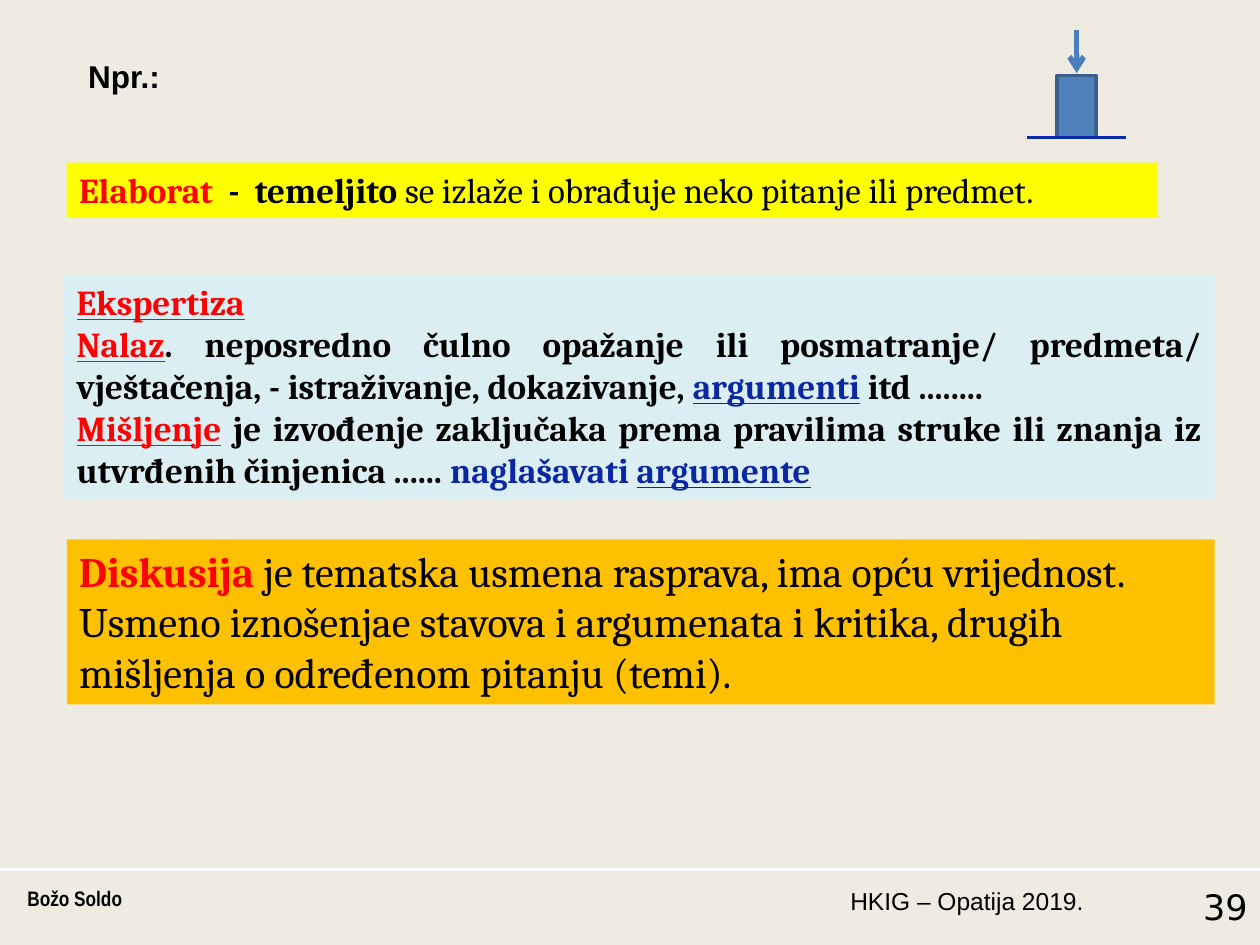
from lxml import etree
from pptx import Presentation
from pptx.dml.color import RGBColor
from pptx.enum.shapes import MSO_CONNECTOR as Conn, MSO_SHAPE as Shape
from pptx.enum.text import MSO_ANCHOR as Anchor, MSO_AUTO_SIZE as AutoSize, PP_ALIGN as Align
from pptx.oxml.ns import qn
from pptx.util import Inches, Pt

COLORS = {
    "background": "EEECE1", "white": "FFFFFF", "black": "000000",
    "red": "FF0000", "blue": "0B28A1", "yellow": "FFFF00",
    "pale": "DBEEF4", "orange": "FFC000", "block": "4F81BD",
    "block_edge": "3A5F8C", "ground": "0C2AAC", "arrow": "4B7EBC",
}

# Run styles: colour, bold, underline
TERM = ("red", True, False)
TERM_LINE = ("red", True, True)
PLAIN = ("black", False, False)
STRONG = ("black", True, False)
KEY = ("blue", True, False)
KEY_LINE = ("blue", True, True)

ELABORAT = [[
    ("Elaborat ", TERM),
    (" -  temeljito", STRONG),
    (" se izlaže i obrađuje neko pitanje ili predmet.", PLAIN),
]]
EKSPERTIZA = [
    [("Ekspertiza", TERM_LINE)],
    [
        ("Nalaz", TERM_LINE),
        (". neposredno čulno opažanje ili posmatranje/ predmeta/ vještačenja, "
         "- istraživanje, dokazivanje, ", STRONG),
        ("argumenti", KEY_LINE),
        (" itd ........", STRONG),
    ],
    [
        ("Mišljenje", TERM_LINE),
        (" je izvođenje zaključaka prema pravilima struke ili znanja iz "
         "utvrđenih činjenica ...... ", STRONG),
        ("naglašavati ", KEY),
        ("argumente", KEY_LINE),
    ],
]
DISKUSIJA = [
    [("Diskusija ", TERM),
     ("je tematska usmena rasprava, ima opću vrijednost.", PLAIN)],
    [("Usmeno iznošenjae stavova i argumenata i kritika, drugih mišljenja "
      "o određenom pitanju (temi).", PLAIN)],
]


def rgb(name):
    return RGBColor.from_string(COLORS[name])


def set_font(font, name, size, bold=False):
    font.name, font.size, font.bold = name, Pt(size), bold
    font.color.rgb = rgb("black")


def add_line(s, start, end, color, width, arrow=False):
    line = s.shapes.add_connector(Conn.STRAIGHT, *map(Inches, start + end))
    line.line.color.rgb = rgb(color)
    line.line.width = Pt(width)
    if arrow:
        etree.SubElement(line.line._get_or_add_ln(), qn("a:tailEnd"), type="arrow")
    etree.SubElement(line._element.spPr, qn("a:effectLst"))


def add_rect(s, box, fill):
    sp = s.shapes.add_shape(Shape.RECTANGLE, *map(Inches, box))
    sp.shadow.inherit = False
    sp.fill.solid()
    sp.fill.fore_color.rgb = rgb(fill)
    sp.line.fill.background()
    return sp


def place_title(s, box, text):
    sp = s.shapes.title
    sp.left, sp.top, sp.width, sp.height = map(Inches, box)
    tf = sp.text_frame
    tf.text = text
    tf.word_wrap = False
    tf.auto_size = AutoSize.NONE
    tf.vertical_anchor = Anchor.TOP
    p = tf.paragraphs[0]
    p.alignment = Align.LEFT
    set_font(p.font, "Arial", 18, True)


def add_definition(s, box, fill, paragraphs, size, align=Align.LEFT):
    """Filled panel; each paragraph is a list of (text, run style)."""
    tf = add_rect(s, box, fill).text_frame
    tf.word_wrap = True
    tf.vertical_anchor = Anchor.TOP
    for i, runs in enumerate(paragraphs):
        p = tf.add_paragraph() if i else tf.paragraphs[0]
        p.alignment = align
        p.font.name, p.font.size = "Cambria", Pt(size)
        for text, (color, bold, underline) in runs:
            r = p.add_run()
            r.text = text
            r.font.bold, r.font.underline = bold, underline
            r.font.color.rgb = rgb(color)


def add_loaded_block(s, box):
    """Block on a ground line with a load arrow pressing on its top."""
    left, top, width, height = box
    middle, ground = left + width / 2, top + height
    block_w, block_h = 0.31, 0.49
    block_top = ground - block_h
    block = add_rect(s, (middle - block_w / 2, block_top, block_w, block_h), "block")
    block.line.color.rgb = rgb("block_edge")
    block.line.width = Pt(2)
    add_line(s, (left, ground), (left + width, ground), "ground", 1.5)
    add_line(s, (middle, top), (middle, block_top - 0.02), "arrow", 3, arrow=True)


def add_footer(s, box):
    left, top, width, height = box
    add_line(s, (left, top), (left + width, top), "white", 1.5)
    items = [
        (0.12, 6.4, "Božo Soldo", "Arial Narrow", 12, True, Align.LEFT),
        (6.57, 2.13, "HKIG – Opatija 2019.", "Arial", 14, False, Align.RIGHT),
        (8.78, 1.22, "39", "DejaVu Sans", 20, False, Align.RIGHT),
    ]
    for x, w, text, font, size, bold, align in items:
        tf = s.shapes.add_textbox(Inches(left + x), Inches(top + 0.08),
                                  Inches(w), Inches(height - 0.08)).text_frame
        tf.word_wrap = True
        tf.text = text
        p = tf.paragraphs[0]
        p.alignment = align
        set_font(p.font, font, size, bold)


def main():
    prs = Presentation()
    prs.slide_width, prs.slide_height = Inches(10), Inches(7.5)
    s = prs.slides.add_slide(prs.slide_layouts[5])
    s.background.fill.solid()
    s.background.fill.fore_color.rgb = rgb("background")

    add_footer(s, (0, 6.9, 10, 0.6))
    place_title(s, (0.6, 0.4, 0.78, 0.4), "Npr.:")
    add_definition(s, (0.53, 1.29, 8.66, 0.44), "yellow", ELABORAT, 20)
    add_definition(s, (0.51, 2.18, 9.13, 1.78), "pale", EKSPERTIZA, 20, Align.JUSTIFY)
    add_definition(s, (0.53, 4.28, 9.11, 1.31), "orange", DISKUSIJA, 24)
    add_loaded_block(s, (8.15, 0.24, 0.79, 0.85))
    prs.save("out.pptx")


if __name__ == "__main__":
    main()
